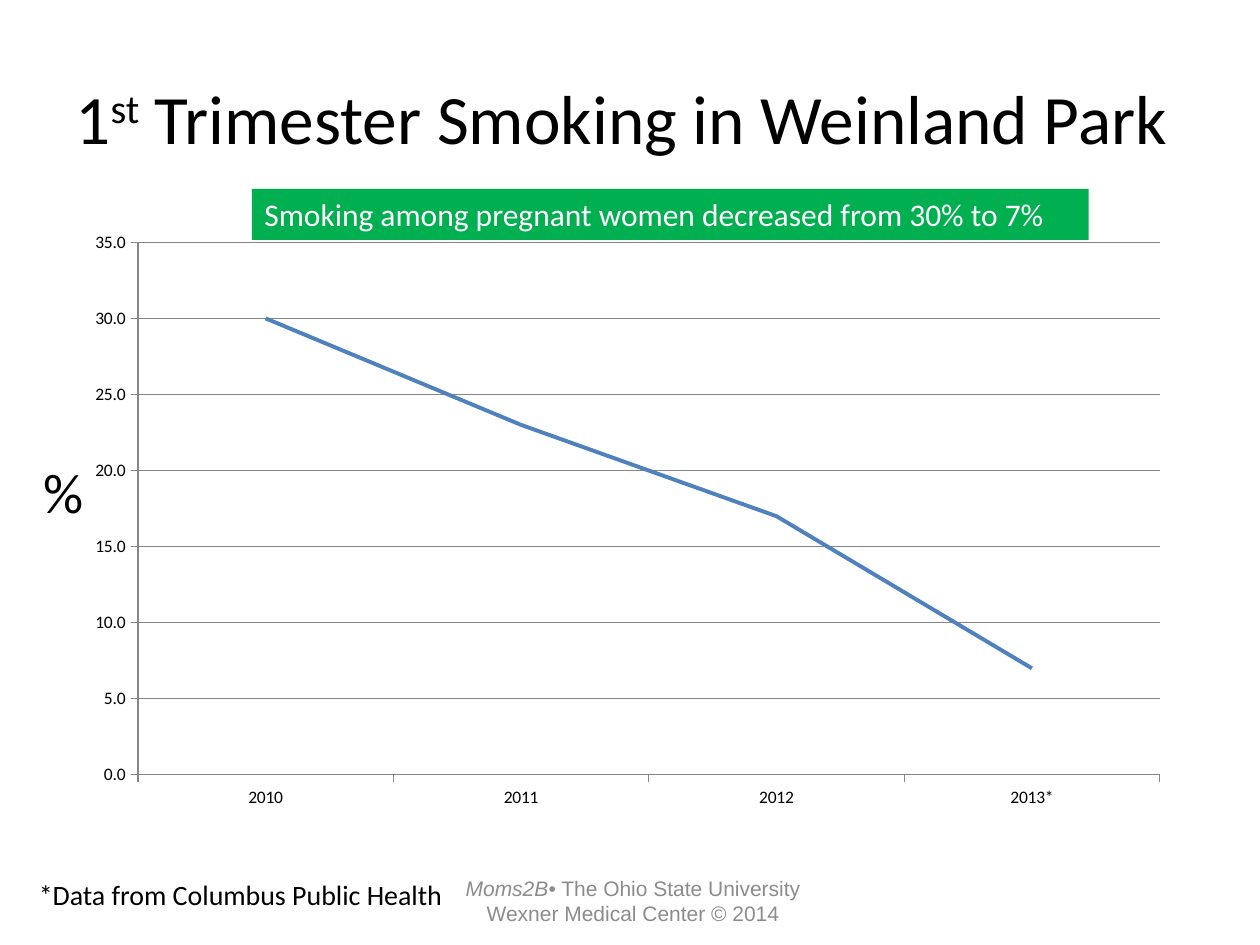
from dataclasses import dataclass

from pptx import Presentation
from pptx.chart.data import CategoryChartData
from pptx.dml.color import RGBColor
from pptx.enum.chart import XL_CHART_TYPE, XL_MARKER_STYLE, XL_TICK_MARK
from pptx.enum.shapes import MSO_SHAPE
from pptx.enum.text import MSO_ANCHOR, MSO_AUTO_SIZE, PP_ALIGN
from pptx.util import Inches, Pt

LINE = XL_CHART_TYPE.LINE
BARE = XL_MARKER_STYLE.NONE
OUT = XL_TICK_MARK.OUTSIDE
RECT = MSO_SHAPE.RECTANGLE
TOP, MIDDLE = MSO_ANCHOR.TOP, MSO_ANCHOR.MIDDLE
FIXED = MSO_AUTO_SIZE.NONE
LEFT, CENTER = PP_ALIGN.LEFT, PP_ALIGN.CENTER

COLS, ROWS = 100, 75


@dataclass(frozen=True)
class Theme:
    font: str = "Calibri"
    plain: str = "Arial"
    ink: str = "000000"
    paper: str = "FFFFFF"
    grey: str = "8C8C8C"
    rule: str = "868686"
    trend: str = "4F81BD"
    green: str = "00B050"
    title: float = 39.6
    unit: float = 32
    banner: float = 18
    note: float = 16
    foot: float = 12
    axis: float = 10


def rgb(code):
    return RGBColor.from_string(code)


def write(frame, *runs, size, font, color, align=LEFT, anchor=TOP, wrap=False):
    """Fill a frame; a run is text or a pair of text and "sup" or "italic"."""
    frame.auto_size = FIXED
    frame.word_wrap = wrap
    frame.vertical_anchor = anchor
    para = frame.paragraphs[0]
    para.alignment = align
    for item in runs:
        text, mark = (item, "") if isinstance(item, str) else item
        run = para.add_run()
        run.text = text
        run.font.name = font
        run.font.size = Pt(size)
        run.font.color.rgb = rgb(color)
        run.font.italic = mark == "italic"
        if mark == "sup":
            run.font._element.set("baseline", "30000")


class Page:
    def __init__(self, deck, theme):
        self.theme = theme
        self.slide = deck.slides.add_slide(deck.slide_layouts[5])
        self.col = deck.slide_width / COLS
        self.row = deck.slide_height / ROWS

    def area(self, x, y, w, h):
        return (round(x * self.col), round(y * self.row),
                round(w * self.col), round(h * self.row))

    def title(self, spot, *runs):
        look, shape = self.theme, self.slide.shapes.title
        shape.left, shape.top, shape.width, shape.height = self.area(*spot)
        shape.fill.solid()
        shape.fill.fore_color.rgb = rgb(look.paper)
        write(shape.text_frame, *runs, size=look.title, font=look.font,
              color=look.ink, anchor=MIDDLE, wrap=True)

    def text(self, spot, *runs, **style):
        box = self.slide.shapes.add_textbox(*self.area(*spot))
        write(box.text_frame, *runs, **style)

    def banner(self, spot, text):
        look = self.theme
        shape = self.slide.shapes.add_shape(RECT, *self.area(*spot))
        shape.shadow.inherit = False
        shape.fill.solid()
        shape.fill.fore_color.rgb = rgb(look.green)
        shape.line.fill.background()
        write(shape.text_frame, text, size=look.banner, font=look.font,
              color=look.paper)

    def chart(self, spot, name, points):
        look = self.theme
        data = CategoryChartData(number_format="0.0")
        data.categories = list(points)
        data.add_series(name, points.values())
        chart = self.slide.shapes.add_chart(LINE, *self.area(*spot), data).chart
        chart.has_legend = chart.has_title = False
        chart.font.name = look.font
        chart.font.size = Pt(look.axis)
        chart.font.color.rgb = rgb(look.ink)

        scale = chart.value_axis
        scale.minimum_scale, scale.maximum_scale, scale.major_unit = 0, 35, 5
        scale.has_major_gridlines = True
        scale.tick_labels.number_format = "0.0"
        scale.tick_labels.number_format_is_linked = False
        for axis in (scale, chart.category_axis):
            axis.major_tick_mark = OUT
        for part in (scale, chart.category_axis, scale.major_gridlines):
            part.format.line.color.rgb = rgb(look.rule)
            part.format.line.width = Pt(0.7)

        plot = chart.plots[0]
        plot.vary_by_categories = False
        trend = plot.series[0]
        trend.smooth = False
        trend.format.line.color.rgb = rgb(look.trend)
        trend.format.line.width = Pt(2.25)
        trend.marker.style = BARE


def main():
    deck = Presentation()
    deck.slide_width, deck.slide_height = Inches(10), Inches(7.5)
    look = Theme()
    page = Page(deck, look)
    page.title((5, 3, 90, 12.5), "1", ("st", "sup"),
               " Trimester Smoking in Weinland Park")
    page.chart((5.8, 17.5, 88, 47.5), "Series 1",
               {"2010": 30, "2011": 23, "2012": 17, "2013*": 7})
    page.text((34.4, 69.5, 31.7, 4), ("Moms2B", "italic"),
              "• The Ohio State University Wexner Medical Center © 2014",
              size=look.foot, font=look.plain, color=look.grey,
              align=CENTER, anchor=MIDDLE, wrap=True)
    body = {"font": look.font, "color": look.ink}
    page.text((2.5, 35.8, 5.2, 6.4), "%", size=look.unit, **body)
    page.text((2.1, 69.15, 34.2, 3.7), "*Data from Columbus Public Health",
              size=look.note, **body)
    page.banner((20, 15, 66.4, 4.04),
                "Smoking among pregnant women decreased from 30% to 7%")
    deck.save("out.pptx")


if __name__ == "__main__":
    main()
